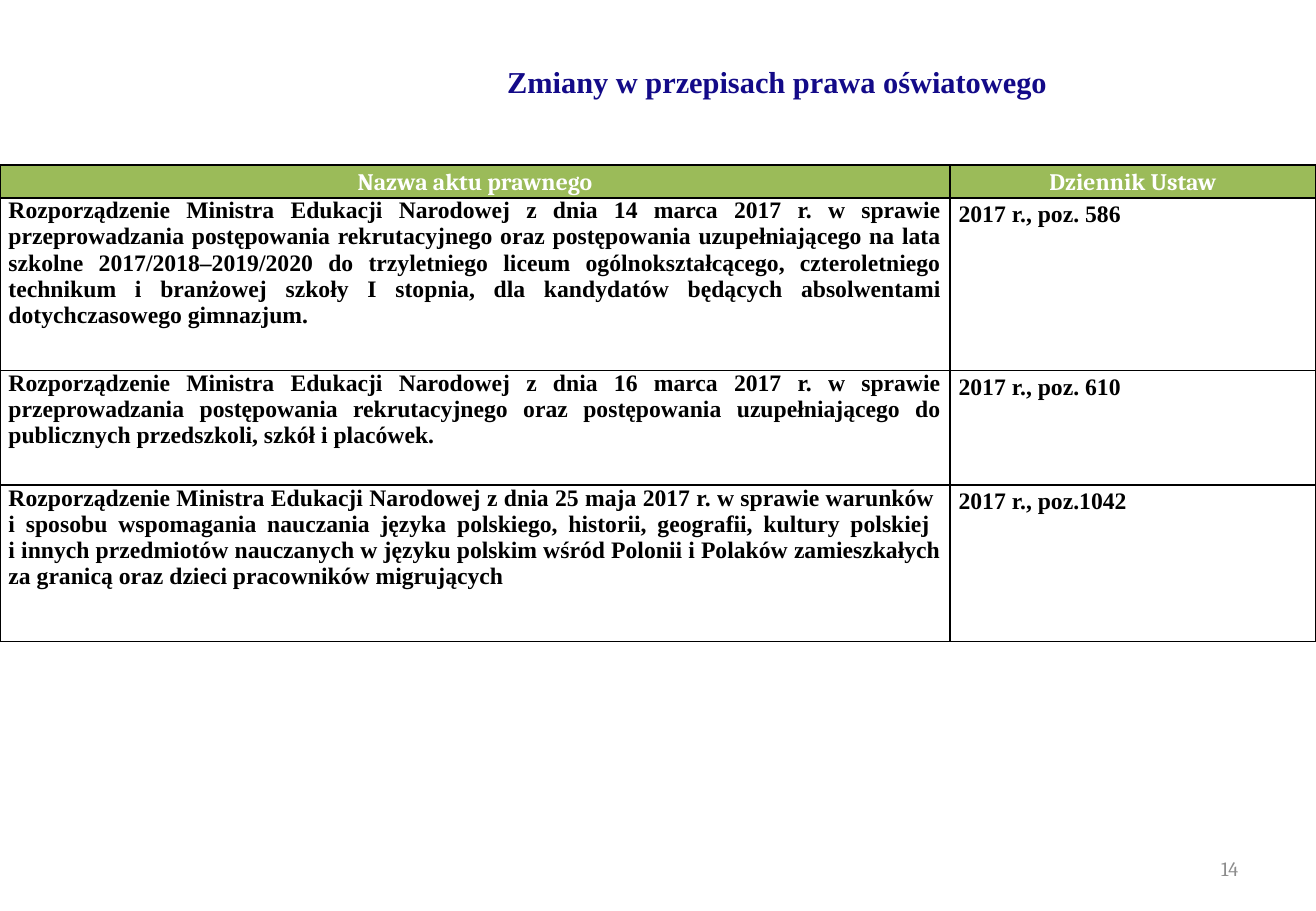
from dataclasses import dataclass

from lxml.etree import SubElement
from pptx import Presentation
from pptx.dml.color import RGBColor
from pptx.enum.text import MSO_ANCHOR, MSO_AUTO_SIZE, PP_ALIGN
from pptx.oxml.ns import qn
from pptx.table import Table, _Cell
from pptx.text.text import TextFrame
from pptx.util import Inches, Length, Pt

CENTER, RIGHT, JUSTIFY = PP_ALIGN.CENTER, PP_ALIGN.RIGHT, PP_ALIGN.JUSTIFY
TOP, MIDDLE = MSO_ANCHOR.TOP, MSO_ANCHOR.MIDDLE
NO_AUTOFIT = MSO_AUTO_SIZE.NONE

SLIDE_WIDTH, SLIDE_HEIGHT = 10.83, 7.5
HEADING_FONT, BODY_FONT = "Cambria", "Times New Roman"
BLACK, WHITE, GREEN, NAVY, GRAY = "000000", "FFFFFF", "9BBB59", "130A88", "8C8C8C"
BORDER_WIDTH = 1
LOOSE = 1.15


@dataclass(frozen=True)
class Area:
    left: float
    top: float
    width: float
    height: float

    def box(self) -> tuple[Length, Length, Length, Length]:
        return across(self.left), down(self.top), across(self.width), down(self.height)


@dataclass(frozen=True)
class LegalAct:
    name: str
    journal: str
    height: float


TITLE_AREA = Area(19.58, 2.13, 78.95, 13.6)
NUMBER_AREA = Area(71.65, 92.67, 23.36, 5.33)
HEADER_HEIGHT = 3.2
TABLE_TOP = 18.13
COLUMN_WIDTHS = (72.2, 27.8)
HEADINGS = ("Nazwa aktu prawnego", "Dziennik Ustaw")
ACTS = (
    LegalAct(
        "Rozporządzenie Ministra Edukacji Narodowej z dnia 14 marca 2017 r. w sprawie "
        "przeprowadzania postępowania rekrutacyjnego oraz postępowania uzupełniającego "
        "na lata szkolne 2017/2018–2019/2020 do trzyletniego liceum ogólnokształcącego, "
        "czteroletniego technikum i branżowej szkoły I stopnia, dla kandydatów będących "
        "absolwentami dotychczasowego gimnazjum.",
        "2017 r., poz. 586",
        18.93,
    ),
    LegalAct(
        "Rozporządzenie Ministra Edukacji Narodowej z dnia 16 marca 2017 r. w sprawie "
        "przeprowadzania postępowania rekrutacyjnego oraz postępowania uzupełniającego "
        "do publicznych przedszkoli, szkół i placówek.",
        "2017 r., poz. 610",
        12.6,
    ),
    LegalAct(
        "Rozporządzenie Ministra Edukacji Narodowej z dnia 25 maja 2017 r. w sprawie "
        "warunków \vi sposobu wspomagania nauczania języka polskiego, historii, geografii, "
        "kultury polskiej \vi innych przedmiotów nauczanych w języku polskim wśród Polonii "
        "i Polaków zamieszkałych za granicą oraz dzieci pracowników migrujących",
        "2017 r., poz.1042",
        17.2,
    ),
)


def across(percent: float) -> Length:
    return Inches(SLIDE_WIDTH * percent / 100)


def down(percent: float) -> Length:
    return Inches(SLIDE_HEIGHT * percent / 100)


def color(value: str) -> RGBColor:
    return RGBColor.from_string(value)


def write(frame: TextFrame, text: str, *, font: str = BODY_FONT, size: float = 14,
          ink: str = BLACK, bold: bool = True, align: PP_ALIGN = JUSTIFY,
          spacing: float = 1.0) -> None:
    frame.word_wrap = True
    paragraph = frame.paragraphs[0]
    paragraph.text = text
    paragraph.alignment = align
    paragraph.line_spacing = spacing
    for run in paragraph.runs:
        run.font.name = font
        run.font.size = Pt(size)
        run.font.bold = bold
        run.font.color.rgb = color(ink)


def style_cell(cell: _Cell, fill: str, inset: float) -> None:
    cell.margin_left = cell.margin_right = Inches(inset)
    cell.margin_top = cell.margin_bottom = 0
    cell.vertical_anchor = TOP
    properties = cell._tc.get_or_add_tcPr()
    for side in ("a:lnL", "a:lnR", "a:lnT", "a:lnB"):
        border = SubElement(properties, qn(side), w=str(Pt(BORDER_WIDTH)))
        SubElement(SubElement(border, qn("a:solidFill")), qn("a:srgbClr"), val=BLACK)
    cell.fill.solid()
    cell.fill.fore_color.rgb = color(fill)


def fill_table(table: Table) -> None:
    table.first_row = table.horz_banding = False
    for column, width in zip(table.columns, COLUMN_WIDTHS):
        column.width = across(width)
    heights = (HEADER_HEIGHT, *(act.height for act in ACTS))
    for row, height in zip(table.rows, heights):
        row.height = down(height)
    for cell, heading in zip(table.rows[0].cells, HEADINGS):
        style_cell(cell, GREEN, 0.04)
        write(cell.text_frame, heading, font=HEADING_FONT, ink=WHITE,
              align=CENTER, spacing=LOOSE)
    for row_index, act in enumerate(ACTS, start=1):
        entries = ((act.name, 1.0), (act.journal, LOOSE))
        for cell, (text, spacing) in zip(table.rows[row_index].cells, entries):
            style_cell(cell, WHITE, 0.07)
            write(cell.text_frame, text, spacing=spacing)


def main() -> None:
    presentation = Presentation()
    presentation.slide_width = Inches(SLIDE_WIDTH)
    presentation.slide_height = Inches(SLIDE_HEIGHT)
    slide = presentation.slides.add_slide(presentation.slide_layouts[5])

    title = slide.shapes.title
    title.left, title.top, title.width, title.height = TITLE_AREA.box()
    title.text_frame.auto_size = NO_AUTOFIT
    title.text_frame.vertical_anchor = MIDDLE
    write(title.text_frame, "Zmiany w przepisach prawa oświatowego",
          size=18, ink=NAVY, align=CENTER)

    page_number = slide.shapes.add_textbox(*NUMBER_AREA.box()).text_frame
    page_number.vertical_anchor = MIDDLE
    write(page_number, "14", font=HEADING_FONT, size=12, ink=GRAY,
          bold=False, align=RIGHT)

    table_height = HEADER_HEIGHT + sum(act.height for act in ACTS)
    table_area = Area(0, TABLE_TOP, sum(COLUMN_WIDTHS), table_height)
    fill_table(slide.shapes.add_table(
        len(ACTS) + 1, len(HEADINGS), *table_area.box()).table)

    presentation.save("out.pptx")


if __name__ == "__main__":
    main()
